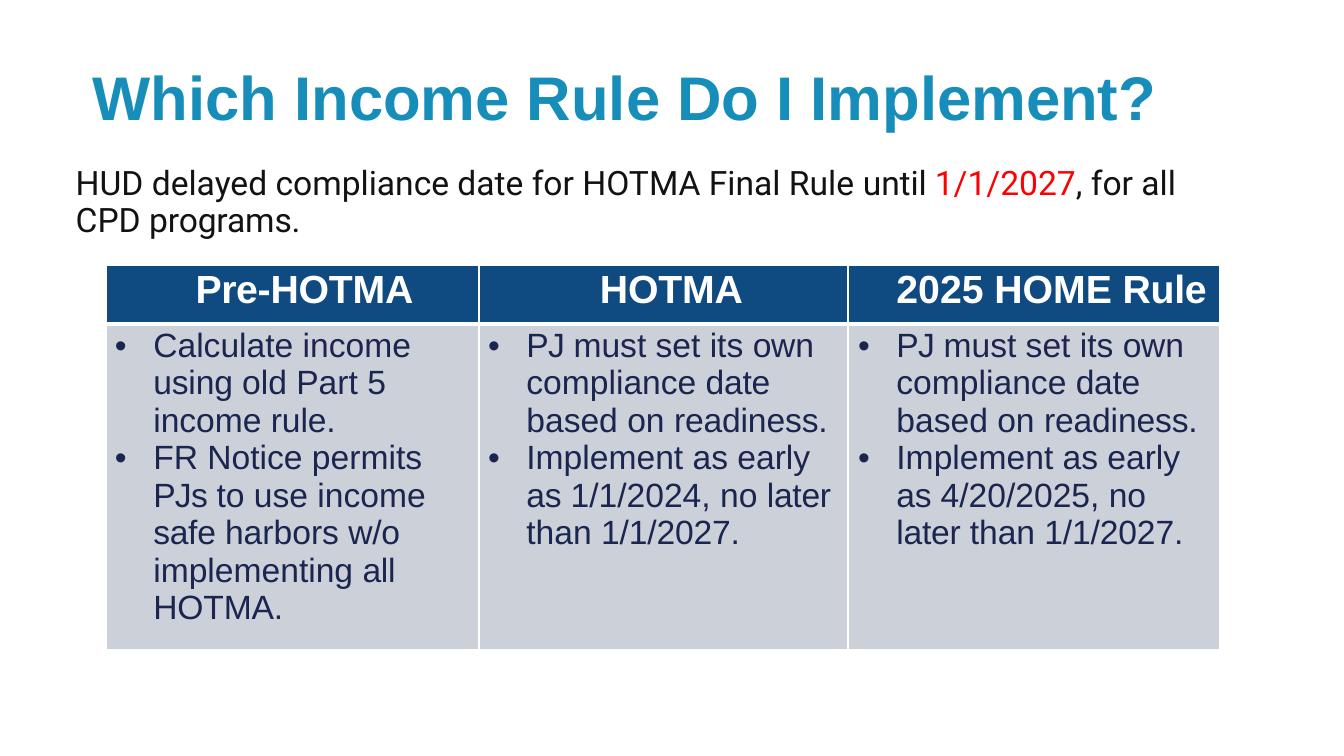
from pptx import Presentation
from pptx import util as u
from pptx.dml.color import RGBColor
from pptx.enum import text
from pptx.oxml.ns import qn
from lxml import etree

WIDTH, HEIGHT = u.Inches(13.33), u.Inches(7.5)
COLORS = {
    "title": "178EBA", "body": "121212", "alert": "FF0000", "white": "FFFFFF",
    "header": "0F4A81", "cell": "CCD0D8", "navy": "1B2650",
}
COLUMN_SHARES = (27.76, 27.46, 27.61)
ROW_SHARES = (7.8, 42.93)


def across(percent):
    return round(WIDTH * percent / 100)


def down(percent):
    return round(HEIGHT * percent / 100)


def color(name):
    return RGBColor.from_string(COLORS[name])


def place(shape, left, top, width, height):
    """Position a shape by percentages of the slide."""
    shape.left, shape.top = across(left), down(top)
    shape.width, shape.height = across(width), down(height)


def add_spans(para, spans, size, ink, font="Arial", bold=False):
    """Add (wording, tracking in points[, colour]) runs to a paragraph."""
    for wording, tracking, *own_ink in spans:
        span = para.add_run()
        span.text = wording
        span.font.name, span.font.size, span.font.bold = font, u.Pt(size), bold
        span.font.color.rgb = color(own_ink[0] if own_ink else ink)
        if tracking:
            span.font._element.set("spc", str(round(tracking * 100)))


def set_indent(para, left, first=0, bullet=None, tab=None):
    props = para._p.get_or_add_pPr()
    props.set("marL", str(u.Inches(left)))
    props.set("indent", str(u.Inches(first)))
    if bullet:
        etree.SubElement(props, qn("a:buFont"), typeface="Arial")
        etree.SubElement(props, qn("a:buChar"), char=bullet)
    else:
        etree.SubElement(props, qn("a:buNone"))
    if tab:
        stops = etree.SubElement(props, qn("a:tabLst"))
        etree.SubElement(stops, qn("a:tab"), pos=str(u.Inches(tab)), algn="l")


def fill_placeholder(shape, spans, top_inset, anchor, spacing, **style):
    frame = shape.text_frame
    frame.word_wrap = True
    frame.auto_size = text.MSO_AUTO_SIZE.SHAPE_TO_FIT_TEXT
    frame.vertical_anchor = anchor
    frame.margin_left = frame.margin_right = frame.margin_bottom = 0
    frame.margin_top = u.Inches(top_inset)
    para = frame.paragraphs[0]
    set_indent(para, 0)
    para.alignment = text.PP_ALIGN.LEFT
    para.line_spacing, para.space_before = spacing, u.Pt(0)
    add_spans(para, spans, **style)


def style_cell(cell, fill, thick_side):
    """Give a cell white borders, one of them 3 pt, and a solid fill."""
    props = cell._tc.get_or_add_tcPr()
    for side in "LRTB":
        points = 3 if side == thick_side else 1
        line = etree.SubElement(props, qn(f"a:ln{side}"), w=str(u.Pt(points)))
        paint = etree.SubElement(line, qn("a:solidFill"))
        etree.SubElement(paint, qn("a:srgbClr"), val=COLORS["white"])
    cell.fill.solid()
    cell.fill.fore_color.rgb = color(fill)
    cell.margin_left = cell.margin_right = cell.margin_bottom = 0
    cell.margin_top = u.Inches(0.03)


def fill_header(cell, spans, indent):
    style_cell(cell, "header", "B")
    para = cell.text_frame.paragraphs[0]
    set_indent(para, indent)
    add_spans(para, spans, size=28, ink="white", bold=True)


def fill_list(cell, items, indent):
    style_cell(cell, "cell", "T")
    frame = cell.text_frame
    for index, spans in enumerate(items):
        para = frame.add_paragraph() if index else frame.paragraphs[0]
        set_indent(para, indent, -0.38, "•", indent)
        add_spans(para, spans, size=24, ink="navy")


def own_date_items(earliest):
    """Bullets for a rule whose compliance date the PJ sets itself."""
    return [
        [("PJ ", -0.5), ("must set its ", 0), ("own ", -0.2), ("compliance ", 0),
         ("date ", -0.2), ("based on ", 0), ("readiness.", -0.1)],
        [("Implement as early ", 0), ("as ", -0.2), (f"{earliest}, no ", 0),
         ("later ", -0.2), ("than ", 0), ("1/1/2027.", -0.1)],
    ]


def add_rules_table(page, rules):
    frame = page.shapes.add_table(
        2, len(rules), across(7.88), down(35.07),
        across(sum(COLUMN_SHARES)), down(sum(ROW_SHARES)))
    table = frame.table
    table.horz_banding = False
    for column, share in zip(table.columns, COLUMN_SHARES):
        column.width = across(share)
    for row, share in zip(table.rows, ROW_SHARES):
        row.height = down(share)
    for index, (heading, heading_indent, items, list_indent) in enumerate(rules):
        fill_header(table.cell(0, index), heading, heading_indent)
        fill_list(table.cell(1, index), items, list_indent)


def main():
    deck = Presentation()
    deck.slide_width, deck.slide_height = WIDTH, HEIGHT
    page = deck.slides.add_slide(deck.slide_layouts[1])
    title, body = page.shapes.title, page.placeholders[1]

    place(title, 6.9, 8.8, 81.25, 8.93)
    fill_placeholder(title, [("Which Income Rule Do I Implement?", 0)], 0,
                     text.MSO_ANCHOR.MIDDLE, 0.9, size=44, ink="title", bold=True)

    place(body, 5.63, 21.2, 84.25, 10.53)
    notice = [("HUD delayed compliance date for HOTMA Final Rule ", 0),
              ("until ", -0.1), ("1/1/2027", 0, "alert"),
              (", for all CPD ", 0), ("programs.", -0.1)]
    fill_placeholder(body, notice, 0.06, text.MSO_ANCHOR.TOP, u.Pt(25.9),
                     size=24, ink="body", font="Roboto")

    old_rule_items = [
        [("Calculate income ", 0), ("using ", -0.1), ("old Part 5 income ", 0),
         ("rule.", -0.1)],
        [("FR Notice permits ", 0), ("PJs ", -0.5), ("to use income ", 0),
         ("safe ", -0.2), ("harbors ", 0), ("w/o ", -0.2), ("implementing ", 0),
         ("all ", -0.2), ("HOTMA.", -0.1)],
    ]
    add_rules_table(page, [
        ([("Pre-", -0.3), ("HOTMA", -0.1)], 0.89, old_rule_items, 0.47),
        ([("HOTMA", -0.1)], 1.2, own_date_items("1/1/2024"), 0.47),
        ([("2025 HOME ", 0), ("Rule", -0.2)], 0.48, own_date_items("4/20/2025"), 0.48),
    ])
    deck.save("out.pptx")


if __name__ == "__main__":
    main()
